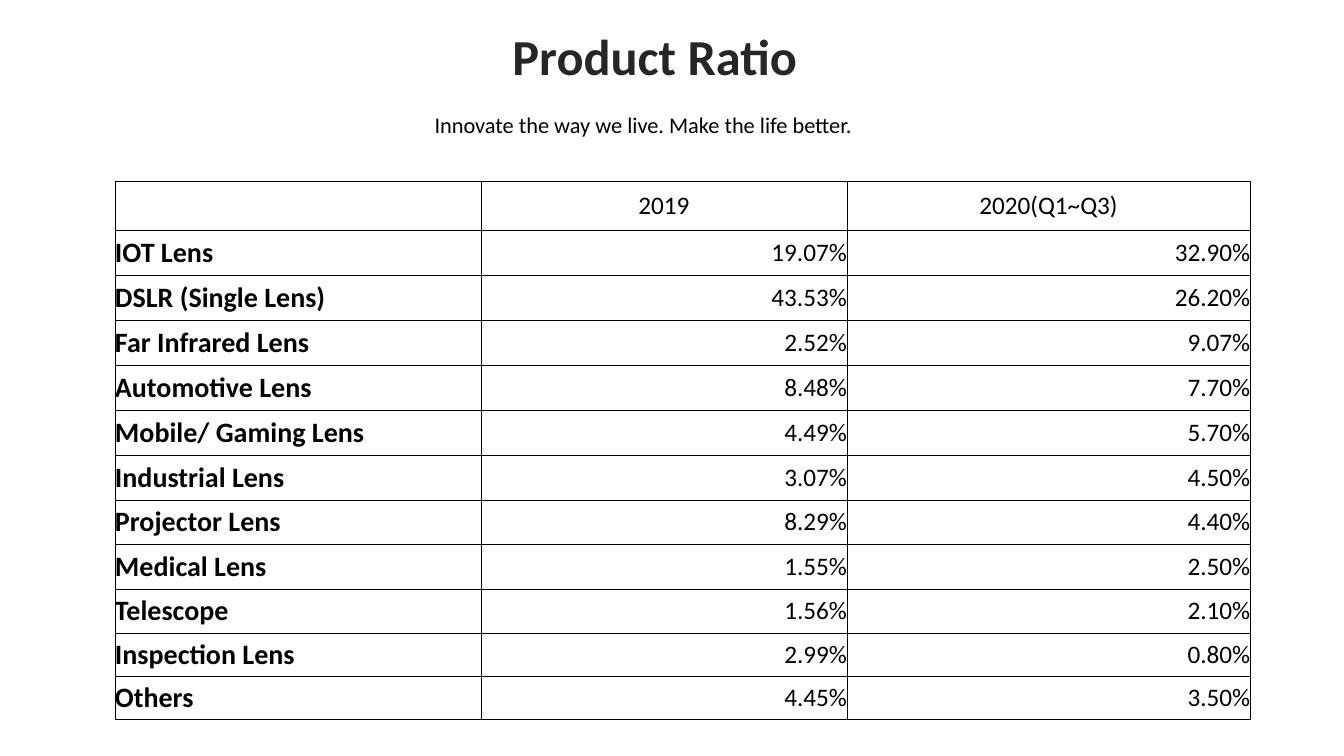
from lxml.etree import SubElement
from pptx import Presentation
from pptx.dml.color import RGBColor
from pptx.enum.text import MSO_ANCHOR as Anchor, PP_ALIGN as Align
from pptx.oxml.ns import qn
from pptx.util import Inches, Pt

ROWS = [
    ("", "2019", "2020(Q1~Q3)"),
    ("IOT Lens", "19.07%", "32.90%"),
    ("DSLR (Single Lens)", "43.53%", "26.20%"),
    ("Far Infrared Lens", "2.52%", "9.07%"),
    ("Automotive Lens", "8.48%", "7.70%"),
    ("Mobile/ Gaming Lens", "4.49%", "5.70%"),
    ("Industrial Lens", "3.07%", "4.50%"),
    ("Projector Lens", "8.29%", "4.40%"),
    ("Medical Lens", "1.55%", "2.50%"),
    ("Telescope", "1.56%", "2.10%"),
    ("Inspection Lens", "2.99%", "0.80%"),
    ("Others", "4.45%", "3.50%"),
]
COLUMN_WIDTHS = [3.63, 3.63, 4]
ROW_HEIGHTS = [0.49] + [3.56 / 8] * 8 + [0.43] * 3
BLACK, WHITE, CHARCOAL = "000000", "FFFFFF", "262626"


def write(frame, text, size, color, bold, **layout):
    paragraph = frame.paragraphs[0]
    for name, value in layout.items():
        setattr(paragraph, name, value)
    font = paragraph.font
    if text:
        run = paragraph.add_run()
        run.text = text
        font = run.font
    for name, value in {"name": "Calibri", "size": Pt(size), "bold": bold}.items():
        setattr(font, name, value)
    font.color.rgb = RGBColor.from_string(color)


def draw_borders(cell):
    properties = cell._tc.get_or_add_tcPr()
    for position, side in enumerate(("lnL", "lnR", "lnT", "lnB")):
        line = properties.makeelement(qn(f"a:{side}"), {"w": str(Pt(0.5))})
        fill = SubElement(line, qn("a:solidFill"))
        SubElement(fill, qn("a:srgbClr"), val=BLACK)
        properties.insert(position, line)


presentation = Presentation()
presentation.slide_width = Inches(13.33)
presentation.slide_height = Inches(7.5)
slide = presentation.slides.add_slide(presentation.slide_layouts[5])

title = slide.shapes.title
for name, value in {"left": 3.43, "top": 0.35, "width": 6.13, "height": 0.73}.items():
    setattr(title, name, Inches(value))
title.text_frame.vertical_anchor = Anchor.MIDDLE
write(title.text_frame, "Product Ratio", 36, CHARCOAL, True,
      alignment=Align.CENTER, line_spacing=Pt(20), space_before=Pt(10))

subtitle = slide.shapes.add_textbox(Inches(2.13), Inches(1.08), Inches(8.5), Inches(0.4))
subtitle.text_frame.word_wrap = True
write(subtitle.text_frame, "Innovate the way we live. Make the life better.", 16, BLACK, False,
      alignment=Align.CENTER, line_spacing=0.9, space_before=Pt(10))

table = slide.shapes.add_table(
    len(ROWS), len(COLUMN_WIDTHS), Inches(1.14), Inches(1.8),
    Inches(sum(COLUMN_WIDTHS)), Inches(sum(ROW_HEIGHTS))).table
table.first_row = table.horz_banding = False
for column, width in zip(table.columns, COLUMN_WIDTHS):
    column.width = Inches(width)
for row, height in zip(table.rows, ROW_HEIGHTS):
    row.height = Inches(height)

for row_index, values in enumerate(ROWS):
    for column_index, text in enumerate(values):
        cell = table.cell(row_index, column_index)
        for side in ("left", "right", "top", "bottom"):
            setattr(cell, f"margin_{side}", 0)
        cell.vertical_anchor = Anchor.MIDDLE
        cell.fill.solid()
        cell.fill.fore_color.rgb = RGBColor.from_string(WHITE)
        draw_borders(cell)
        is_label = column_index == 0
        alignment = Align.LEFT if is_label else Align.RIGHT if row_index else Align.CENTER
        write(cell.text_frame, text, 20 if is_label else 18, BLACK, is_label, alignment=alignment)

presentation.save("out.pptx")
